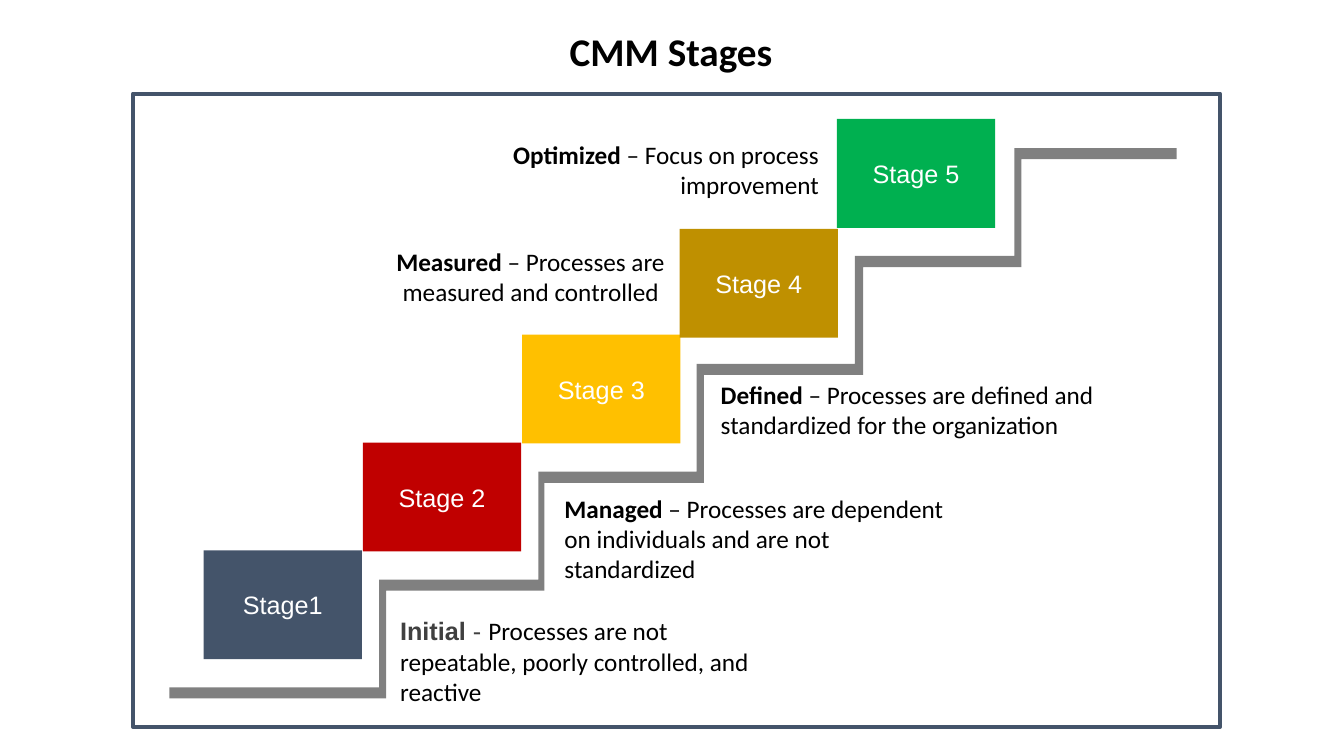
from pptx import Presentation
from pptx.dml.color import RGBColor
from pptx.enum.shapes import MSO_SHAPE
from pptx.enum.text import MSO_ANCHOR, PP_ALIGN
from pptx.util import Pt

RECTANGLE = MSO_SHAPE.RECTANGLE
TOP, MIDDLE = MSO_ANCHOR.TOP, MSO_ANCHOR.MIDDLE
LEFT, CENTER, RIGHT = PP_ALIGN.LEFT, PP_ALIGN.CENTER, PP_ALIGN.RIGHT

PX = 9144
COLORS = {
    "black": "000000", "white": "FFFFFF", "charcoal": "404040",
    "gray": "808080", "slate": "44546A", "red": "C00000",
    "yellow": "FFC000", "gold": "BF9000", "green": "00B050",
}
STAGES = [
    ("Stage1", 202, 546, "slate"),
    ("Stage 2", 360, 439, "red"),
    ("Stage 3", 518, 332, "yellow"),
    ("Stage 4", 674, 227, "gold"),
    ("Stage 5", 830, 118, "green"),
]
DEFINITIONS = [
    ("Managed", " – Processes are dependent on individuals and are not standardized",
     (550, 484, 399, 115), LEFT),
    ("Measured", " – Processes are measured and controlled ",
     (289, 239, 380, 81), RIGHT),
    ("Optimized", " – Focus on process improvement",
     (442, 133, 380, 81), RIGHT),
    ("Defined", " – Processes are defined and standardized for the organization",
     (705, 371, 399, 115), LEFT),
]
INITIAL = [
    ("Initial ", "Arial", "charcoal", True),
    ("- ", "Arial", "charcoal", False),
    ("Processes are not repeatable, poorly controlled, and reactive",
     "Calibri", "black", False),
]


def color(name):
    return RGBColor.from_string(COLORS[name])


def emu(box):
    return [value * PX for value in box]


def write_spans(shape, spans, size, align, anchor):
    frame = shape.text_frame
    frame.word_wrap = True
    frame.vertical_anchor = anchor
    para = frame.paragraphs[0]
    para.alignment = align
    for text, font, tint, bold in spans:
        span = para.add_run()
        span.text = text
        span.font.name = font
        span.font.size = Pt(size)
        span.font.bold = bold
        span.font.color.rgb = color(tint)
    return para


def add_title(page, box):
    title = page.shapes.add_textbox(*emu(box))
    spans = [("CMM Stages", "Calibri", "black", True)]
    write_spans(title, spans, 28, CENTER, MIDDLE).line_spacing = 0.9


def add_frame(page, box):
    frame = page.shapes.add_shape(RECTANGLE, *emu(box))
    frame.shadow.inherit = False
    frame.fill.background()
    frame.line.color.rgb = color("slate")
    frame.line.width = Pt(3)


def add_stage(page, box, label, tint):
    stage = page.shapes.add_shape(RECTANGLE, *emu(box))
    stage.shadow.inherit = False
    stage.fill.solid()
    stage.fill.fore_color.rgb = color(tint)
    stage.line.fill.background()
    write_spans(stage, [(label, "Arial", "white", False)], 18, CENTER, MIDDLE)


def add_staircase(page, box):
    left, top, width, height = box
    right, bottom = left + width, top + height
    tread, riser, rise, run = 11, 7, 107, 157.5
    floor = bottom - tread
    upper, lower = [(left, floor)], [(left, bottom)]
    for step in range(5):
        x = left + 208 + step * run
        y = floor - step * rise
        upper += [(x, y), (x, y - rise)]
        lower += [(x + riser, y + tread), (x + riser, y - rise + tread)]
    upper.append((right, top))
    lower.append((right, top + tread))
    points = upper + lower[::-1]
    builder = page.shapes.build_freeform(*points[0], scale=PX)
    builder.add_line_segments(points[1:], close=True)
    stairs = builder.convert_to_shape()
    stairs.shadow.inherit = False
    stairs.fill.solid()
    stairs.fill.fore_color.rgb = color("gray")
    stairs.line.fill.background()


def add_definition(page, box, spans, align):
    definition = page.shapes.add_textbox(*emu(box))
    write_spans(definition, spans, 18, align, TOP)


def main():
    deck = Presentation()
    deck.slide_width, deck.slide_height = 1333 * PX, 750 * PX
    page = deck.slides.add_slide(deck.slide_layouts[6])
    for label, left, top, tint in STAGES:
        add_stage(page, (left, top, 157, 108), label, tint)
    add_staircase(page, (168, 147, 999, 546))
    add_definition(page, (387, 606, 399, 115), INITIAL, LEFT)
    for term, meaning, box, align in DEFINITIONS:
        spans = [(term, "Calibri", "black", True),
                 (meaning, "Calibri", "black", False)]
        add_definition(page, box, spans, align)
    add_title(page, (494, 25, 343, 56))
    add_frame(page, (132, 93, 1078, 628))
    deck.save("out.pptx")


if __name__ == "__main__":
    main()
